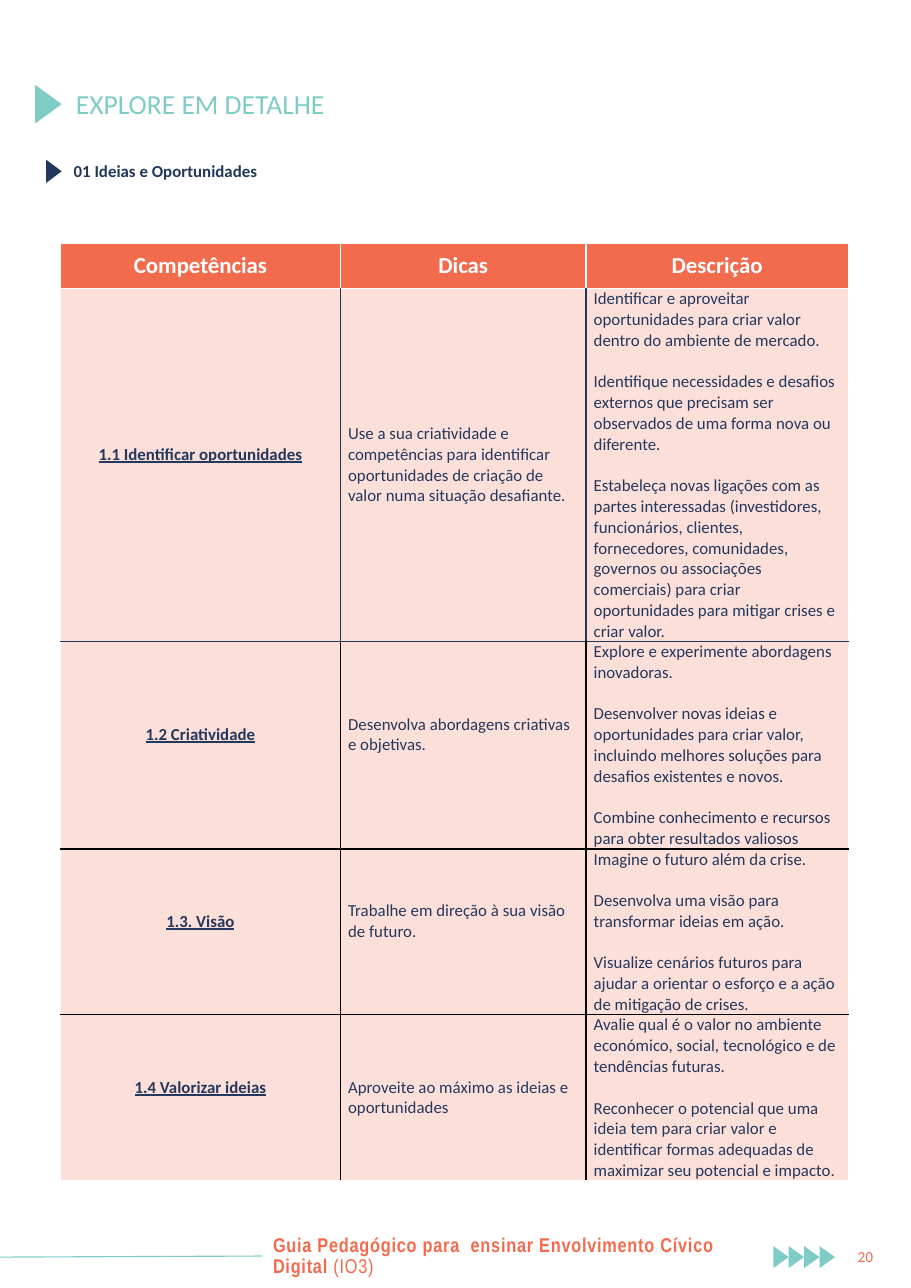
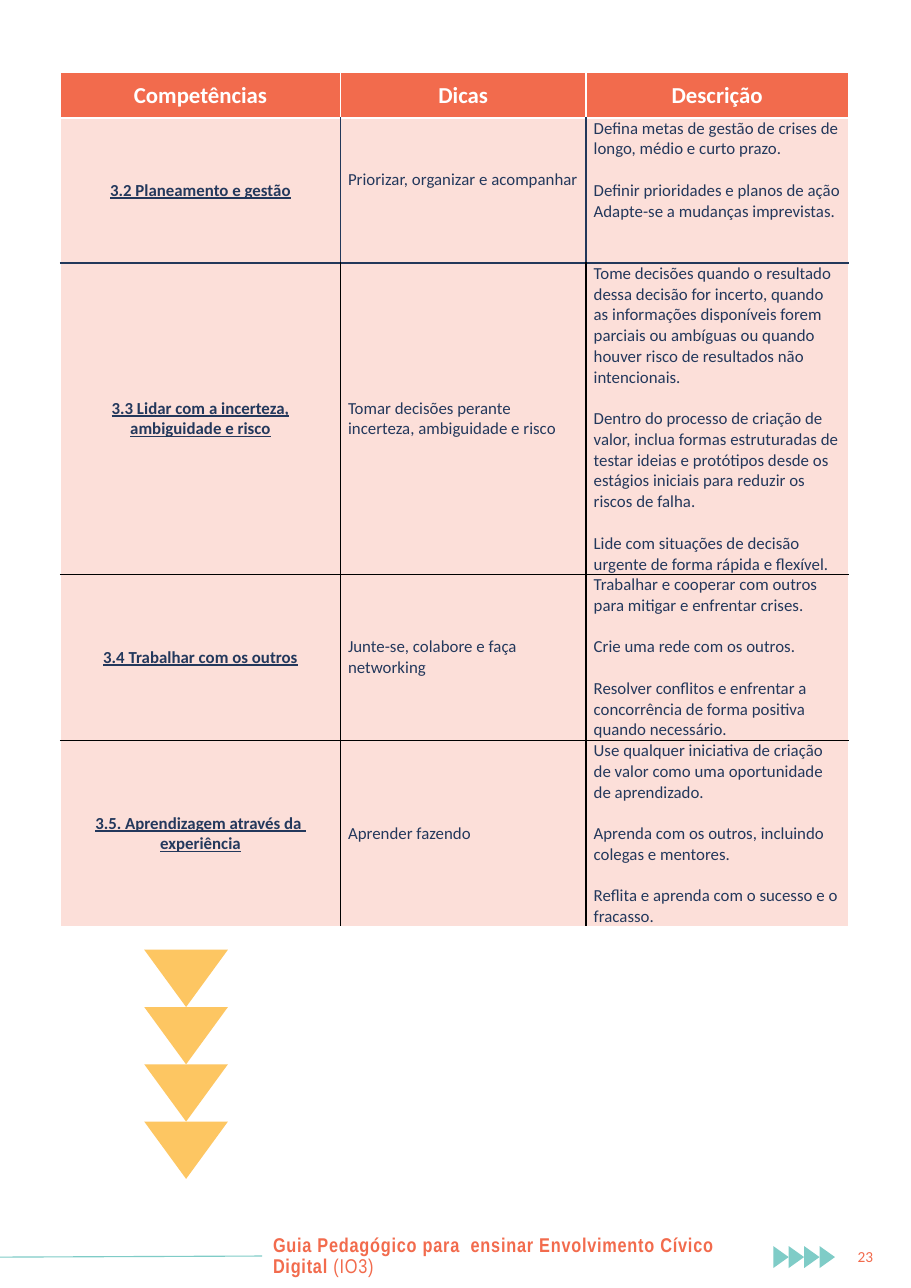
"""Builds two A4 pages of a competence guide, each with a table and a shared footer."""
from lxml.etree import SubElement
from pptx import Presentation
from pptx.dml.color import RGBColor
from pptx.enum.shapes import MSO_CONNECTOR
from pptx.enum.text import MSO_ANCHOR, PP_ALIGN
from pptx.oxml.ns import qn
from pptx.util import Inches, Pt

TEAL = RGBColor(0x7F, 0xCC, 0xC7)
CORAL = RGBColor(0xF2, 0x6B, 0x4D)
NAVY = RGBColor(0x22, 0x38, 0x5A)
INK = RGBColor(0x23, 0x38, 0x5C)
YELLOW = RGBColor(0xFD, 0xC6, 0x62)
WHITE = RGBColor(0xFF, 0xFF, 0xFF)
BLACK = RGBColor(0, 0, 0)

BODY_FONT, FOOTER_FONT = "Calibri", "Arial Narrow"
LINE = Pt(13.56)
HEADER_HEIGHT = Inches(0.41)
COLUMNS = (2.54, 2.23, 2.38)
TABLE_LEFT = 0.55
BODY_TINT = 21000
ROW_RULES = (WHITE, WHITE, NAVY, BLACK, BLACK, WHITE)
COLUMN_RULES = (WHITE, NAVY, BLACK, BLACK, BLACK)

TITLE = "EXPLORE EM DETALHE"
SUBTITLE = "01 Ideias e Oportunidades"
FOOTER = ("Guia Pedagógico para  ensinar Envolvimento Cívico Digital ", "(IO3)")
HEADINGS = ("Competências", "Dicas", "Descrição")

# Each row: competence, tip, description blocks, height in lines, raised columns
IDEAS = [
    ("1.1 Identificar oportunidades",
     "Use a sua criatividade e competências para identificar oportunidades de criação de valor "
     "numa situação desafiante.",
     ["Identificar e aproveitar oportunidades para criar valor dentro do ambiente de mercado.",
      "Identifique necessidades e desafios externos que precisam ser observados de uma forma "
      "nova ou diferente.",
      "Estabeleça novas ligações com as partes interessadas (investidores, funcionários, "
      "clientes, fornecedores, comunidades, governos ou associações comerciais) para criar "
      "oportunidades para mitigar crises e criar valor."], 17, (0,)),
    ("1.2 Criatividade", "Desenvolva abordagens criativas e objetivas.",
     ["Explore e experimente abordagens inovadoras.",
      "Desenvolver novas ideias e oportunidades para criar valor, incluindo melhores soluções "
      "para desafios existentes e novos.",
      "Combine conhecimento e recursos para obter resultados valiosos"], 10, (0, 1)),
    ("1.3. Visão", "Trabalhe em direção à sua visão de futuro.",
     ["Imagine o futuro além da crise.",
      "Desenvolva uma visão para transformar ideias em ação.",
      "Visualize cenários futuros para ajudar a orientar o esforço e a ação de mitigação de "
      "crises."], 8, (0, 1)),
    ("1.4 Valorizar ideias", "Aproveite ao máximo as ideias e oportunidades",
     ["Avalie qual é o valor no ambiente económico, social, tecnológico e de tendências futuras.",
      "Reconhecer o potencial que uma ideia tem para criar valor e identificar formas adequadas "
      "de maximizar seu potencial e impacto."], 8, (0,)),
]
ACTIONS = [
    ("3.2 Planeamento e gestão", "Priorizar, organizar e acompanhar",
     ["Defina metas de gestão de crises de longo, médio e curto prazo.",
      "Definir prioridades e planos de ação\nAdapte-se a mudanças imprevistas."], 7, (1,)),
    ("3.3 Lidar com a incerteza, ambiguidade e risco",
     "Tomar decisões perante incerteza, ambiguidade e risco",
     ["Tome decisões quando o resultado dessa decisão for incerto, quando as informações "
      "disponíveis forem parciais ou ambíguas ou quando houver risco de resultados não "
      "intencionais.",
      "Dentro do processo de criação de valor, inclua formas estruturadas de testar ideias e "
      "protótipos desde os estágios iniciais para reduzir os riscos de falha.",
      "Lide com situações de decisão urgente de forma rápida e flexível."], 15, ()),
    ("3.4 Trabalhar com os outros", "Junte-se, colabore e faça networking",
     ["Trabalhar e cooperar com outros para mitigar e enfrentar crises.",
      "Crie uma rede com os outros.",
      "Resolver conflitos e enfrentar a concorrência de forma positiva quando necessário."],
     8, ()),
    ("3.5. Aprendizagem através da  experiência", "Aprender fazendo",
     ["Use qualquer iniciativa de criação de valor como uma oportunidade de aprendizado.",
      "Aprenda com os outros, incluindo colegas e mentores.",
      "Reflita e aprenda com o sucesso e o fracasso."], 9, ()),
]


def set_font(font, size, color, bold=False, name=BODY_FONT):
    font.name, font.size, font.bold = name, Pt(size), bold
    font.color.rgb = color


def add_triangle(page, points, color):
    builder = page.shapes.build_freeform(*map(Inches, points[0]), scale=1.0)
    builder.add_line_segments([tuple(map(Inches, point)) for point in points[1:]], close=True)
    shape = builder.convert_to_shape()
    shape.shadow.inherit = False
    shape.fill.solid()
    shape.fill.fore_color.rgb = color
    shape.line.fill.background()


def add_right_triangle(page, left, top, width, height, color):
    add_triangle(page, [(left + width, top + height / 2), (left, top), (left, top + height)],
                 color)


def add_text(page, frame, spans, size, color, bold=False, name=BODY_FONT,
             anchor=MSO_ANCHOR.MIDDLE, align=PP_ALIGN.LEFT, spaced=True):
    box = page.shapes.add_textbox(*map(Inches, frame))
    box.text_frame.word_wrap = True
    box.text_frame.vertical_anchor = anchor
    para = box.text_frame.paragraphs[0]
    para.alignment = align
    if spaced:
        para.line_spacing, para.space_before = 0.9, Pt(8.3)
    set_font(para.font, size, color, bold, name)
    for text in spans:
        span = para.add_run()
        span.text = text
        set_font(span.font, size, color, bold, name)
    return para


def add_footer(page, number):
    add_text(page, (7.66, 11.26, 0.39, 0.29), [number], 10, CORAL,
             align=PP_ALIGN.CENTER, spaced=False)
    for index in range(4):
        add_right_triangle(page, 7.02 + 0.14 * index, 11.31, 0.14, 0.2, TEAL)
    rule = page.shapes.add_connector(MSO_CONNECTOR.STRAIGHT, 0, Inches(11.41),
                                     Inches(2.38), Inches(11.4))
    rule.line.color.rgb, rule.line.width = TEAL, Pt(0.75)
    SubElement(rule._element.spPr, qn("a:effectLst"))
    para = add_text(page, (2.38, 11.13, 4.72, 0.55), FOOTER, 13, CORAL, True, FOOTER_FONT)
    for span in para.runs:
        span._r.get_or_add_rPr().set("spc", "50")
    para.runs[-1].font.bold = False


def set_borders(cell, row, column):
    sides = {
        "lnL": COLUMN_RULES[row] if column > 0 else WHITE,
        "lnR": COLUMN_RULES[row] if column < len(COLUMNS) - 1 else WHITE,
        "lnT": ROW_RULES[row],
        "lnB": ROW_RULES[row + 1],
    }
    for side, color in sides.items():
        edge = SubElement(cell._tc.get_or_add_tcPr(), qn(f"a:{side}"), w=str(Pt(1)))
        SubElement(SubElement(edge, qn("a:solidFill")), qn("a:srgbClr"), val=str(color))


def fill_cell(cell, row, column, blocks, raised=False, anchor=MSO_ANCHOR.MIDDLE):
    header, label = row == 0, row > 0 and column == 0
    set_borders(cell, row, column)
    cell.fill.solid()
    cell.fill.fore_color.rgb = CORAL
    if not header:
        color = cell._tc.tcPr.find(f"{qn('a:solidFill')}/{qn('a:srgbClr')}")
        SubElement(color, qn("a:alpha"), val=str(BODY_TINT))
    cell.margin_left = cell.margin_right = Inches(0.07)
    cell.margin_top, cell.margin_bottom = 0, LINE if raised else 0
    cell.vertical_anchor = anchor
    cell.text_frame.text = "\n".join(blocks)
    starts = {block.split("\n")[0] for block in blocks[1:]}
    for para in cell.text_frame.paragraphs:
        para.alignment = PP_ALIGN.CENTER if header or label else PP_ALIGN.LEFT
        if para.text in starts:
            para.space_before = LINE
        set_font(para.font, 14.9 if header else 11, WHITE if header else INK, header or label)
        para.font.underline = label


def add_competence_table(page, top, rows, description_anchor):
    heights = [HEADER_HEIGHT] + [LINE * row[3] for row in rows]
    frame = page.shapes.add_table(len(heights), len(COLUMNS), Inches(TABLE_LEFT), Inches(top),
                                  Inches(sum(COLUMNS)), sum(heights))
    table = frame.table
    table.first_row = table.horz_banding = False
    for column, width in enumerate(COLUMNS):
        table.columns[column].width = Inches(width)
        fill_cell(table.cell(0, column), 0, column, [HEADINGS[column]])
    for index, height in enumerate(heights):
        table.rows[index].height = height
    for index, (competence, tip, description, _, raised) in enumerate(rows, 1):
        for column, blocks in enumerate(([competence], [tip], description)):
            anchor = description_anchor if column == 2 else MSO_ANCHOR.MIDDLE
            fill_cell(table.cell(index, column), index, column, blocks, column in raised, anchor)


def add_page(deck, number):
    page = deck.slides.add_slide(deck.slide_layouts[6])
    add_footer(page, number)
    return page


def main():
    deck = Presentation()
    deck.slide_width, deck.slide_height = Inches(8.27), Inches(11.69)

    page = add_page(deck, "20")
    add_text(page, (0.59, 0.61, 7.15, 0.7), [TITLE], 18, TEAL)
    add_right_triangle(page, 0.32, 0.77, 0.24, 0.35, TEAL)
    add_right_triangle(page, 0.42, 1.45, 0.14, 0.21, NAVY)
    add_text(page, (0.57, 1.43, 7.15, 0.55), [SUBTITLE], 11, NAVY, True,
             anchor=MSO_ANCHOR.TOP, align=PP_ALIGN.JUSTIFY)
    add_competence_table(page, 2.21, IDEAS, MSO_ANCHOR.MIDDLE)

    page = add_page(deck, "23")
    add_competence_table(page, 0.66, ACTIONS, MSO_ANCHOR.TOP)
    for index in range(4):
        top = 8.62 + 0.52 * index
        add_triangle(page, [(1.69, top + 0.52), (2.07, top), (1.31, top)], YELLOW)

    deck.save("out.pptx")


if __name__ == "__main__":
    main()
